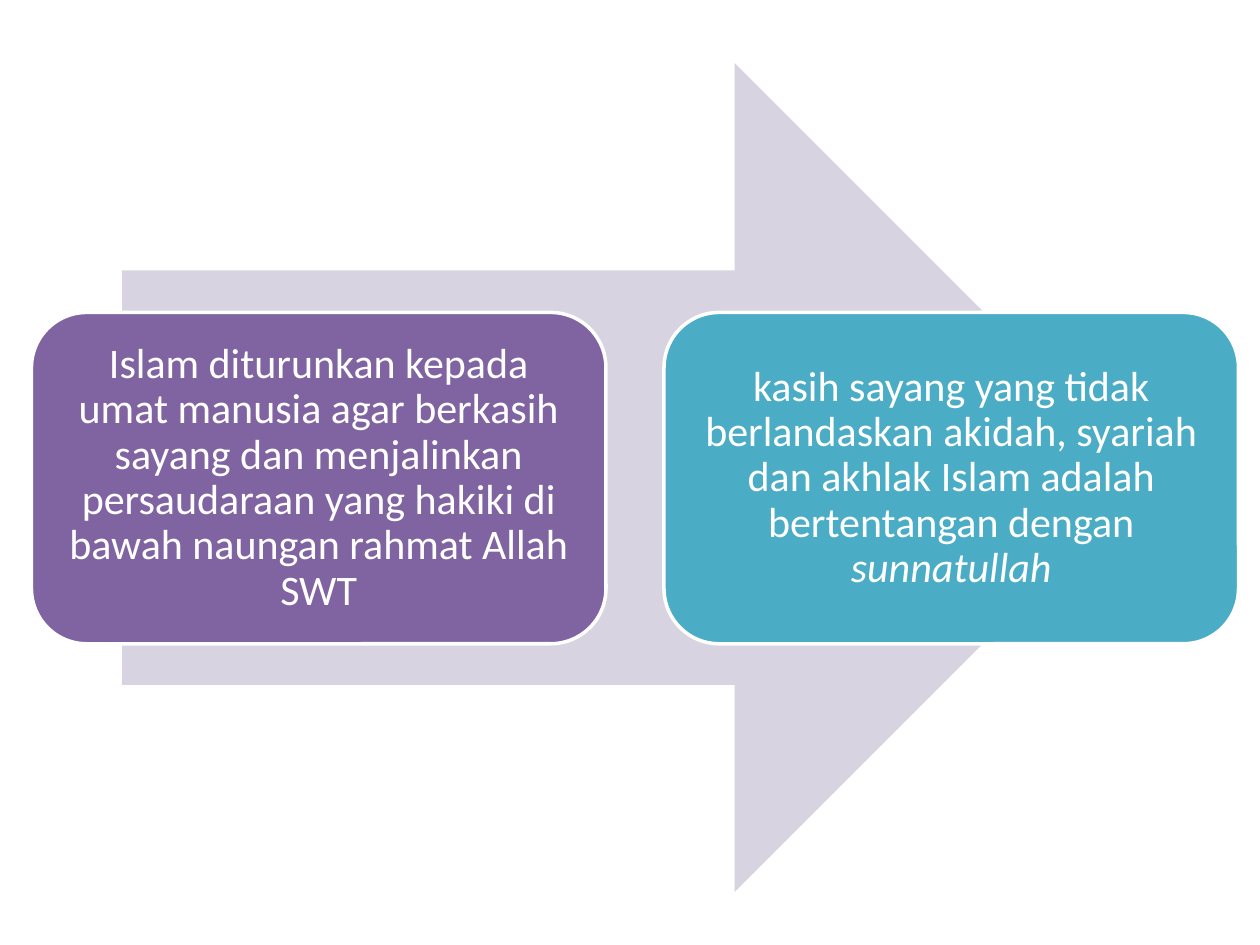
import pptx
import pptx.util
import pptx.dml.color
import pptx.enum.shapes
import pptx.enum.text

Inches = pptx.util.Inches
Pt = pptx.util.Pt
Shapes = pptx.enum.shapes.MSO_SHAPE

COLOURS = {
    "arrow": "D8D3E0",
    "purple": "8064A2",
    "teal": "4BACC6",
    "white": "FFFFFF",
}
CARD_LEFT, CARD_TOP, CARD_WIDTH, CARD_HEIGHT = 0.25, 2.48, 4.56, 2.63
CARD_STEP = 5.02
CARDS = [
    ("purple", [("Islam diturunkan kepada umat manusia agar berkasih sayang dan "
                 "menjalinkan persaudaraan yang hakiki di bawah naungan rahmat "
                 "Allah SWT", False)]),
    ("teal", [("kasih sayang yang tidak berlandaskan akidah, syariah dan akhlak "
               "Islam adalah bertentangan dengan ", False),
              ("sunnatullah", True)]),
]
FRAME_FORMAT = {
    "word_wrap": True,
    "vertical_anchor": pptx.enum.text.MSO_ANCHOR.MIDDLE,
    "margin_left": Inches(0.1),
    "margin_right": Inches(0.1),
    "margin_top": Inches(0.1),
    "margin_bottom": Inches(0.1),
}
PARAGRAPH_FORMAT = {
    "alignment": pptx.enum.text.PP_ALIGN.CENTER,
    "line_spacing": 0.9,
}
FONT_FORMAT = {"name": "Calibri", "size": Pt(24)}


def apply_format(target, values):
    for name, value in values.items():
        setattr(target, name, value)


def colour(name):
    return pptx.dml.color.RGBColor.from_string(COLOURS[name])


def add_filled_shape(slide, kind, left, top, width, height, fill):
    shape = slide.shapes.add_shape(
        kind, Inches(left), Inches(top), Inches(width), Inches(height))
    shape.shadow.inherit = False
    shape.fill.solid()
    shape.fill.fore_color.rgb = colour(fill)
    shape.line.fill.background()
    return shape


def add_card(slide, left, fill, runs):
    card = add_filled_shape(slide, Shapes.ROUNDED_RECTANGLE, left, CARD_TOP,
                            CARD_WIDTH, CARD_HEIGHT, fill)
    card.line.color.rgb = colour("white")
    card.line.width = Pt(2)
    apply_format(card.text_frame, FRAME_FORMAT)
    paragraph = card.text_frame.paragraphs[0]
    apply_format(paragraph, PARAGRAPH_FORMAT)
    for text, italic in runs:
        run = paragraph.add_run()
        run.text = text
        apply_format(run.font, FONT_FORMAT)
        run.font.italic = italic
        run.font.color.rgb = colour("white")


def main():
    presentation = pptx.Presentation()
    presentation.slide_width = Inches(10)
    presentation.slide_height = Inches(7.5)
    slide = presentation.slides.add_slide(presentation.slide_layouts[6])
    add_filled_shape(slide, Shapes.RIGHT_ARROW, 0.97, 0.5, 8.15, 6.58, "arrow")
    for index, (fill, runs) in enumerate(CARDS):
        add_card(slide, CARD_LEFT + index * CARD_STEP, fill, runs)
    presentation.save("out.pptx")


if __name__ == "__main__":
    main()
